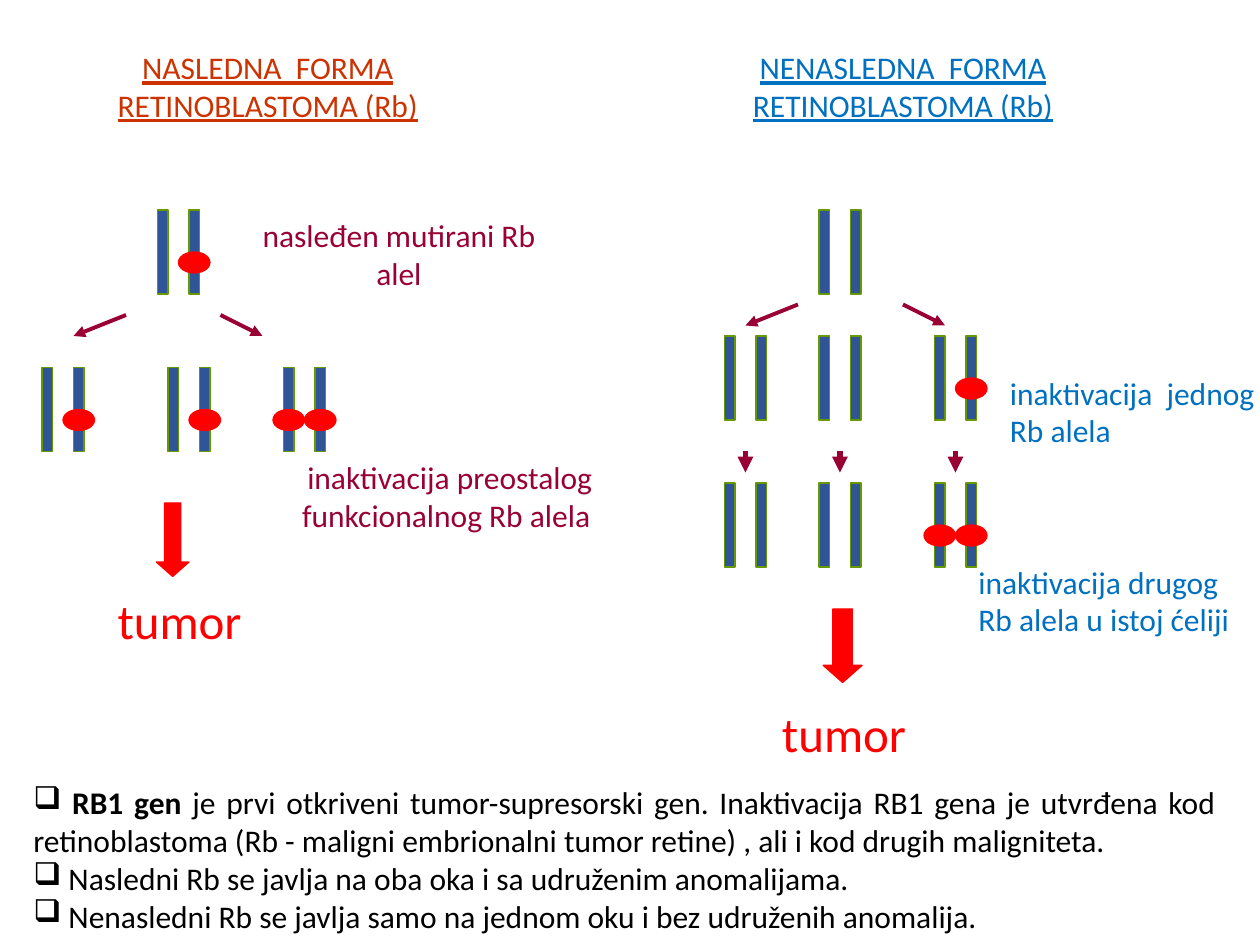
import pptx
import pptx.dml.color
import pptx.enum.shapes
import pptx.enum.text
import pptx.util
from dataclasses import dataclass
from lxml import etree
from pptx.oxml.ns import qn

SHAPES = pptx.enum.shapes.MSO_SHAPE
ALIGN = pptx.enum.text.PP_ALIGN


@dataclass(frozen=True)
class Theme:
    font: str = "Calibri"
    body: int = 18
    outcome: int = 28
    allele: str = "2F5597"
    allele_edge: str = "669900"
    red: str = "FF0000"
    wine: str = "990033"
    rust: str = "CC3300"
    blue: str = "0070C0"
    black: str = "000000"


THEME = Theme()


def grid(units):
    """Twelve grid units make 2.54 cm."""
    return pptx.util.Cm(units * 2.54 / 12)


def rgb(color):
    return pptx.dml.color.RGBColor.from_string(color)


def add_figure(slide, kind, box, fill, edge):
    figure = slide.shapes.add_shape(kind, *map(grid, box))
    figure.shadow.inherit = False
    figure.fill.solid()
    figure.fill.fore_color.rgb = rgb(fill)
    figure.line.color.rgb = rgb(edge)
    figure.line.width = pptx.util.Pt(0.75)
    return figure


def add_allele_pair(slide, left, top, mutated=()):
    """Two alleles; mutated lists which of them (0, 1) carry a mutation."""
    for index in (0, 1):
        add_figure(slide, SHAPES.RECTANGLE, (left + 3 * index, top, 1, 8),
                   THEME.allele, THEME.allele_edge)
    for index in mutated:
        add_figure(slide, SHAPES.OVAL, (left + 3 * index - 1, top + 4, 3, 2),
                   THEME.red, THEME.red)


def add_arrow(slide, start, end, width):
    arrow = slide.shapes.add_connector(
        pptx.enum.shapes.MSO_CONNECTOR.STRAIGHT, *map(grid, start + end))
    arrow.line.color.rgb = rgb(THEME.wine)
    arrow.line.width = pptx.util.Pt(width)
    etree.SubElement(arrow.line._get_or_add_ln(), qn("a:tailEnd"), type="triangle")
    etree.SubElement(arrow._element.spPr, qn("a:effectLst"))


def add_tumor_arrow(slide, box):
    arrow = add_figure(slide, SHAPES.DOWN_ARROW, box, THEME.red, THEME.red)
    arrow.adjustments[0] = 0.5
    arrow.adjustments[1] = 0.44


def style_paragraph(paragraph, color, size, align):
    paragraph.alignment = align
    paragraph.font.name = THEME.font
    paragraph.font.size = pptx.util.Pt(size)
    paragraph.font.color.rgb = rgb(color)


def add_text_frame(slide, box):
    frame = slide.shapes.add_textbox(*map(grid, box)).text_frame
    frame.word_wrap = True
    frame.auto_size = pptx.enum.text.MSO_AUTO_SIZE.SHAPE_TO_FIT_TEXT
    return frame


def add_label(slide, box, text, color, size=THEME.body, align=ALIGN.CENTER,
              underline=None):
    paragraph = add_text_frame(slide, box).paragraphs[0]
    paragraph.add_run().text = text
    style_paragraph(paragraph, color, size, align)
    paragraph.font.underline = underline


def add_facts(slide, box, facts):
    """Bulleted facts, each a bold lead (may be empty) and the rest."""
    frame = add_text_frame(slide, box)
    for index, (lead, rest) in enumerate(facts):
        fact = frame.add_paragraph() if index else frame.paragraphs[0]
        style_paragraph(fact, THEME.black, THEME.body, ALIGN.JUSTIFY)
        bullet = etree.Element(qn("a:buChar"), char="❑")
        fact._p.get_or_add_pPr().insert(0, bullet)
        if lead:
            lead_run = fact.add_run()
            lead_run.text = lead
            lead_run.font.bold = True
        fact.add_run().text = rest


def add_hereditary_form(slide):
    add_label(slide, (4, 4, 43, 8.5), "NASLEDNA  FORMA RETINOBLASTOMA (Rb)",
              THEME.rust, underline=True)
    # Inherited mutation, then the daughter cells
    add_allele_pair(slide, 15, 20, [1])
    add_label(slide, (23, 20, 30, 8.5), "nasleđen mutirani Rb alel", THEME.wine)
    add_arrow(slide, (12, 30), (7, 32), 2.25)
    add_arrow(slide, (21, 30), (25, 32), 2.25)
    for left, mutated in ((4, [1]), (16, [1]), (27, [0, 1])):
        add_allele_pair(slide, left, 35, mutated)
    add_label(slide, (26, 43, 33, 8.5),
              " inaktivacija preostalog funkcionalnog Rb alela", THEME.wine)
    # Outcome
    add_tumor_arrow(slide, (14.9, 47.9, 3.1, 7))
    add_label(slide, (6.6, 55.6, 21, 6.9), "tumor", THEME.red, THEME.outcome)


def add_sporadic_form(slide):
    add_label(slide, (65, 4, 42, 8.5), "NENASLEDNA  FORMA RETINOBLASTOMA (Rb)",
              THEME.blue, underline=True)
    # Healthy cell, then two generations of daughter cells
    add_allele_pair(slide, 78, 20)
    add_arrow(slide, (76, 29), (71, 31), 2.25)
    add_arrow(slide, (86, 29), (90, 31), 2.25)
    for left, arrow_x, first, second in ((69, 71, [], []), (78, 80, [], []),
                                         (89, 91, [1], [0, 1])):
        add_allele_pair(slide, left, 32, first)
        add_arrow(slide, (arrow_x, 43), (arrow_x, 45), 3)
        add_allele_pair(slide, left, 46, second)
    add_label(slide, (95, 35, 29, 8.5), "inaktivacija  jednog Rb alela",
              THEME.blue, align=ALIGN.LEFT)
    add_label(slide, (92, 53, 28, 8.5), "inaktivacija drugog Rb alela u istoj ćeliji",
              THEME.blue, align=ALIGN.LEFT)
    # Outcome
    add_tumor_arrow(slide, (78.4, 58, 3.7, 7))
    add_label(slide, (73.3, 66.4, 19, 6.9), "tumor", THEME.red, THEME.outcome,
              ALIGN.LEFT)


def main():
    deck = pptx.Presentation()
    deck.slide_width, deck.slide_height = pptx.util.Cm(25.4), pptx.util.Cm(19.05)
    slide = deck.slides.add_slide(deck.slide_layouts[6])
    add_hereditary_form(slide)
    add_sporadic_form(slide)
    add_facts(slide, (2, 74, 115, 15.7), [
        (" RB1 gen ", "je prvi otkriveni tumor-supresorski gen. Inaktivacija RB1 "
                      "gena je utvrđena kod retinoblastoma (Rb - maligni embrionalni "
                      "tumor retine) , ali i kod drugih maligniteta."),
        ("", " Nasledni Rb se javlja na oba oka i sa udruženim anomalijama."),
        ("", " Nenasledni Rb se javlja samo na jednom oku i bez udruženih anomalija."),
    ])
    deck.save("out.pptx")


if __name__ == "__main__":
    main()
